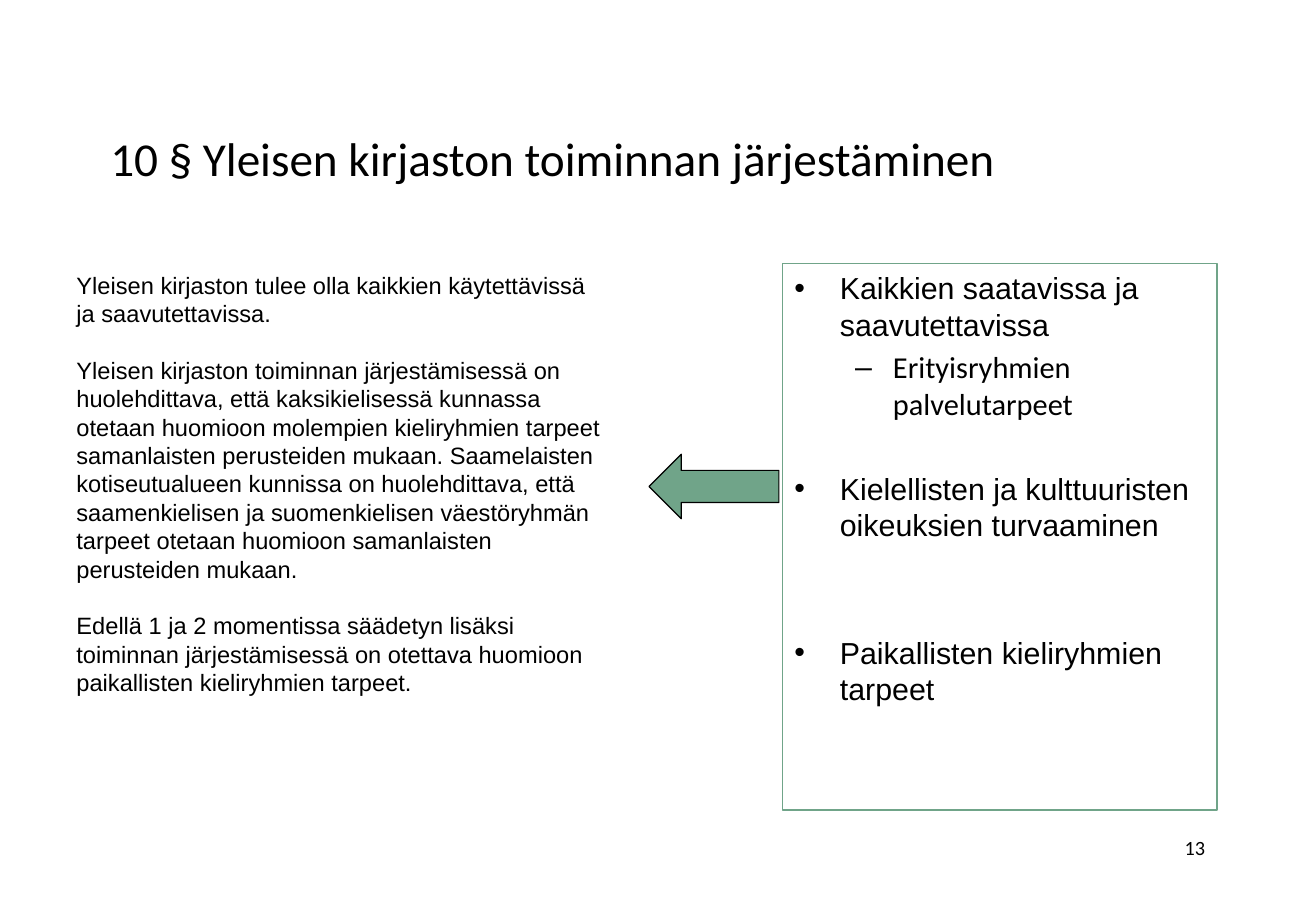
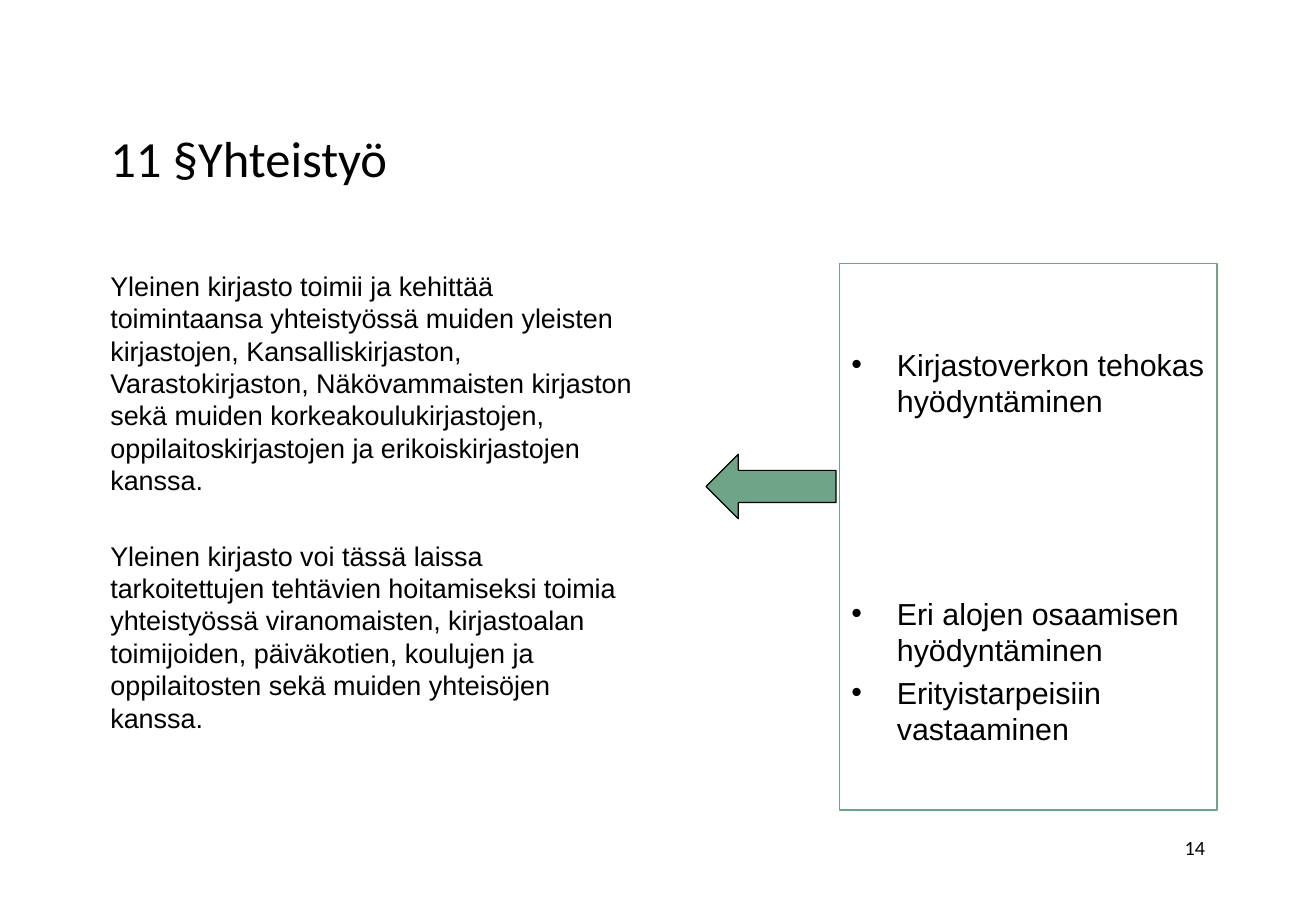
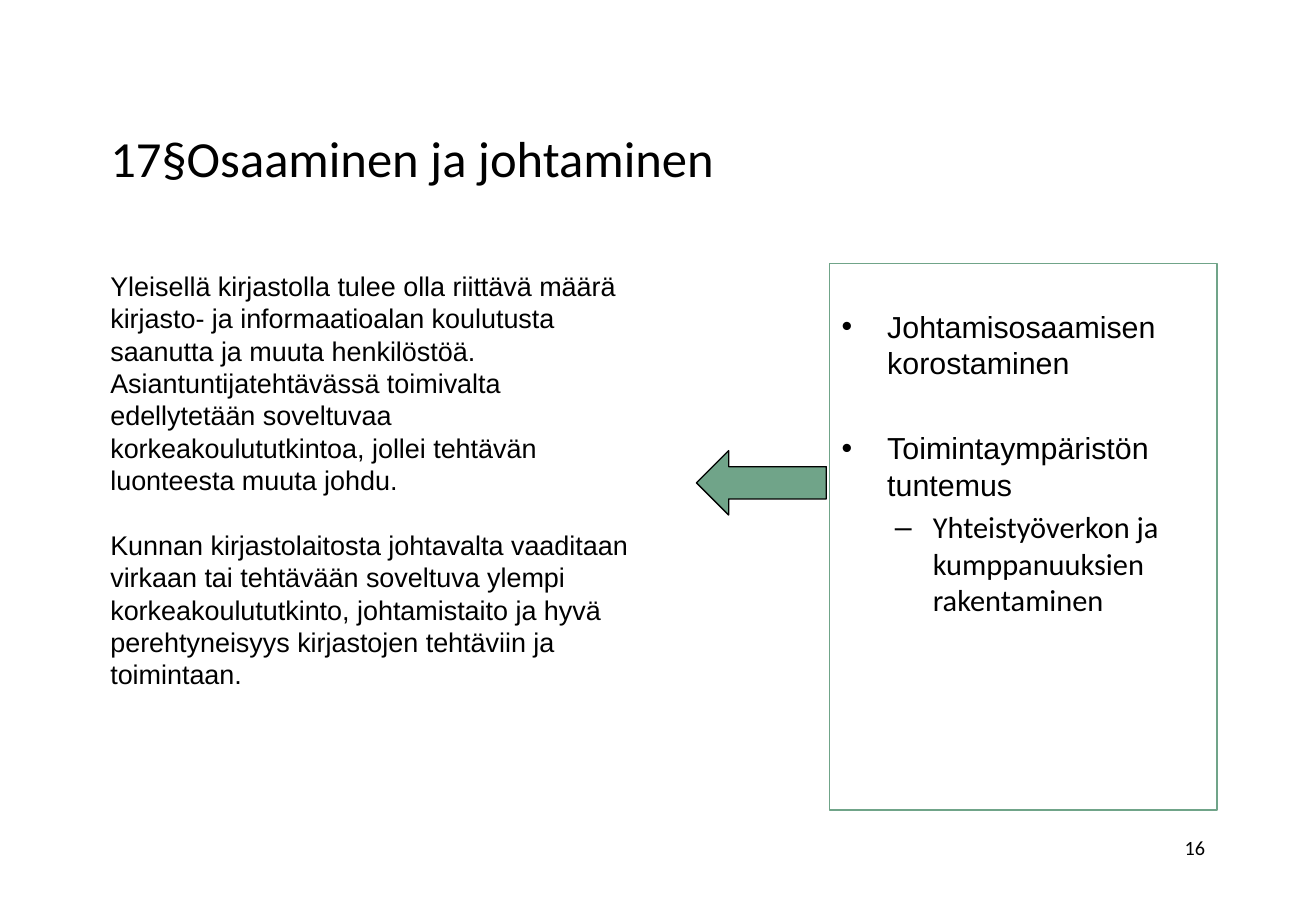
from dataclasses import dataclass

from lxml.etree import SubElement
from pptx import Presentation
from pptx.dml.color import RGBColor
from pptx.enum.shapes import MSO_SHAPE as Preset
from pptx.enum.text import MSO_ANCHOR as Anchor, PP_ALIGN as Align
from pptx.oxml.ns import qn
from pptx.util import Pt


@dataclass(frozen=True)
class Theme:
    text: RGBColor = RGBColor(0x00, 0x00, 0x00)
    green: RGBColor = RGBColor(0x70, 0xA4, 0x89)
    heading_font: str = "Calibri"
    body_font: str = "Arial"
    point_size: float = 18
    number_size: float = 12
    line_pitch: float = 1.2
    line_width: float = 0.75


@dataclass(frozen=True)
class Area:
    left: float
    top: float
    width: float
    height: float


@dataclass(frozen=True)
class Line:
    """A paragraph; a bullet character makes it a list item with a hanging indent."""
    text: str
    before: float = 0
    bullet: str = ""
    indent: float = 0
    hanging: float = 0


@dataclass(frozen=True)
class Section:
    title: str
    title_size: float
    law: tuple[Line, ...]
    law_size: float
    law_left: float
    law_top: float
    points: tuple[Line, ...]
    points_left: float
    points_inset: float
    arrow_top: float
    number: str


THEME = Theme()
TITLE_AREA = Area(58.3, 48.2, 663.1, 90)
NUMBER_AREA = Area(558.7, 491.8, 162.7, 36)
COLUMN_TOP, COLUMN_HEIGHT, LAW_WIDTH = 156.2, 324, 325.4
RIGHT_EDGE = TITLE_AREA.left + TITLE_AREA.width
ARROW_WIDTH, ARROW_HEIGHT, ARROW_GAP = 77, 38.2, 2
INSET = 3.6


def blank_lines(count: int, size: float) -> float:
    """Space before a paragraph that stands this many empty lines below the last."""
    return count * size * THEME.line_pitch + (count + 1) * size * 0.2


def point(text: str, skipped: int = 0, first: bool = False) -> Line:
    before = 0 if first else blank_lines(skipped, THEME.point_size)
    return Line(text, before, "•", 27, 27)


def subpoint(text: str, indent: float) -> Line:
    return Line(text, blank_lines(0, THEME.point_size), "–", indent, 22.5)


SECTIONS = (
    Section(
        "10 § Yleisen kirjaston toiminnan järjestäminen", 28,
        (
            Line("Yleisen kirjaston tulee olla kaikkien käytettävissä ja saavutettavissa."),
            Line("Yleisen kirjaston toiminnan järjestämisessä on huolehdittava, että "
                 "kaksikielisessä kunnassa otetaan huomioon molempien kieliryhmien tarpeet "
                 "samanlaisten perusteiden mukaan. Saamelaisten kotiseutualueen kunnissa on "
                 "huolehdittava, että saamenkielisen ja suomenkielisen väestöryhmän tarpeet "
                 "otetaan huomioon samanlaisten perusteiden mukaan.", 16.8),
            Line("Edellä 1 ja 2 momentissa säädetyn lisäksi toiminnan järjestämisessä on "
                 "otettava huomioon paikallisten kieliryhmien tarpeet.", 16.8),
        ),
        14, 38.2, 157,
        (
            point("Kaikkien saatavissa ja saavutettavissa", first=True),
            subpoint("Erityisryhmien palvelutarpeet", 58.5),
            point("Kielellisten ja kulttuuristen oikeuksien turvaaminen", 1),
            point("Paikallisten kieliryhmien tarpeet", 2),
        ),
        463.7, INSET, 269.3, "13",
    ),
    Section(
        "11 §Yhteistyö", 30,
        (
            Line("Yleinen kirjasto toimii ja kehittää toimintaansa yhteistyössä muiden "
                 "yleisten kirjastojen, Kansalliskirjaston, Varastokirjaston, "
                 "Näkövammaisten kirjaston sekä muiden korkeakoulukirjastojen, "
                 "oppilaitoskirjastojen ja erikoiskirjastojen kanssa."),
            Line("Yleinen kirjasto voi tässä laissa tarkoitettujen tehtävien hoitamiseksi "
                 "toimia yhteistyössä viranomaisten, kirjastoalan toimijoiden, päiväkotien, "
                 "koulujen ja oppilaitosten sekä muiden yhteisöjen kanssa.",
                 blank_lines(1, 16)),
        ),
        16, 58.3, COLUMN_TOP,
        (
            point("Kirjastoverkon tehokas hyödyntäminen", first=True),
            point("Eri alojen osaamisen hyödyntäminen", 4),
            point("Erityistarpeisiin vastaaminen"),
        ),
        497.5, 48.8, 269.3, "14",
    ),
    Section(
        "17§Osaaminen ja johtaminen", 30,
        (
            Line("Yleisellä kirjastolla tulee olla riittävä määrä kirjasto- ja "
                 "informaatioalan koulutusta saanutta ja muuta henkilöstöä. "
                 "Asiantuntijatehtävässä toimivalta edellytetään soveltuvaa "
                 "korkeakoulututkintoa, jollei tehtävän luonteesta muuta johdu."),
            Line("Kunnan kirjastolaitosta johtavalta vaaditaan virkaan tai tehtävään "
                 "soveltuva ylempi korkeakoulututkinto, johtamistaito ja hyvä "
                 "perehtyneisyys kirjastojen tehtäviin ja toimintaan.", 19.2),
        ),
        16, 58.3, COLUMN_TOP,
        (
            point("Johtamisosaamisen korostaminen", first=True),
            point("Toimintaympäristön tuntemus", 1),
            subpoint("Yhteistyöverkon ja kumppanuuksien rakentaminen", 54),
        ),
        491.8, 26.4, 267.1, "16",
    ),
)


def set_all(target, values: dict) -> None:
    for name, value in values.items():
        setattr(target, name, value)


def bounds(area: Area) -> tuple[Pt, ...]:
    return Pt(area.left), Pt(area.top), Pt(area.width), Pt(area.height)


def add_bullet(paragraph, line: Line) -> None:
    properties = paragraph._p.get_or_add_pPr()
    properties.set("marL", str(Pt(line.indent)))
    properties.set("indent", str(-Pt(line.hanging)))
    SubElement(properties, qn("a:buFont")).set("typeface", THEME.body_font)
    SubElement(properties, qn("a:buChar")).set("char", line.bullet)


def write_lines(shape, lines: tuple[Line, ...], size: float, inset: float = INSET) -> None:
    """Fill a shape with body text on a fixed line pitch."""
    frame = shape.text_frame
    set_all(frame, {"word_wrap": True, "vertical_anchor": Anchor.TOP,
                    "margin_top": Pt(inset), "margin_right": Pt(5)})
    for index, line in enumerate(lines):
        paragraph = frame.add_paragraph() if index else frame.paragraphs[0]
        if line.bullet:
            add_bullet(paragraph, line)
        set_all(paragraph, {"alignment": Align.LEFT, "space_before": Pt(line.before),
                            "line_spacing": Pt(size * THEME.line_pitch)})
        run = paragraph.add_run()
        run.text = line.text
        font_name = THEME.heading_font if line.bullet == "–" else THEME.body_font
        set_all(run.font, {"name": font_name, "size": Pt(size)})
        run.font.color.rgb = THEME.text


def add_label(slide, area: Area, text: str, size: float, anchor: Anchor, align: Align) -> None:
    """Add one line in the heading font: a title or a page number."""
    frame = slide.shapes.add_textbox(*bounds(area)).text_frame
    set_all(frame, {"word_wrap": True, "vertical_anchor": anchor})
    paragraph = frame.paragraphs[0]
    paragraph.alignment = align
    run = paragraph.add_run()
    run.text = text
    set_all(run.font, {"name": THEME.heading_font, "size": Pt(size)})
    run.font.color.rgb = THEME.text


def add_outlined(slide, preset: Preset, area: Area, line_color: RGBColor):
    shape = slide.shapes.add_shape(preset, *bounds(area))
    shape.shadow.inherit = False
    shape.fill.background()
    shape.line.color.rgb = line_color
    shape.line.width = Pt(THEME.line_width)
    return shape


def add_section(presentation, section: Section) -> None:
    slide = presentation.slides.add_slide(presentation.slide_layouts[6])
    add_label(slide, TITLE_AREA, section.title, section.title_size, Anchor.MIDDLE, Align.LEFT)

    law_area = Area(section.law_left, section.law_top, LAW_WIDTH, COLUMN_HEIGHT)
    law_box = slide.shapes.add_textbox(*bounds(law_area))
    write_lines(law_box, section.law, section.law_size)

    points_area = Area(section.points_left, COLUMN_TOP,
                       RIGHT_EDGE - section.points_left, COLUMN_HEIGHT)
    points_box = add_outlined(slide, Preset.RECTANGLE, points_area, THEME.green)
    write_lines(points_box, section.points, THEME.point_size, section.points_inset)

    add_label(slide, NUMBER_AREA, section.number, THEME.number_size, Anchor.TOP, Align.RIGHT)

    arrow_area = Area(section.points_left - ARROW_GAP - ARROW_WIDTH, section.arrow_top,
                      ARROW_WIDTH, ARROW_HEIGHT)
    arrow = add_outlined(slide, Preset.LEFT_ARROW, arrow_area, THEME.text)
    arrow.fill.solid()
    arrow.fill.fore_color.rgb = THEME.green


def main() -> None:
    presentation = Presentation()
    set_all(presentation, {"slide_width": Pt(780), "slide_height": Pt(540)})
    for section in SECTIONS:
        add_section(presentation, section)
    presentation.save("out.pptx")


if __name__ == "__main__":
    main()
